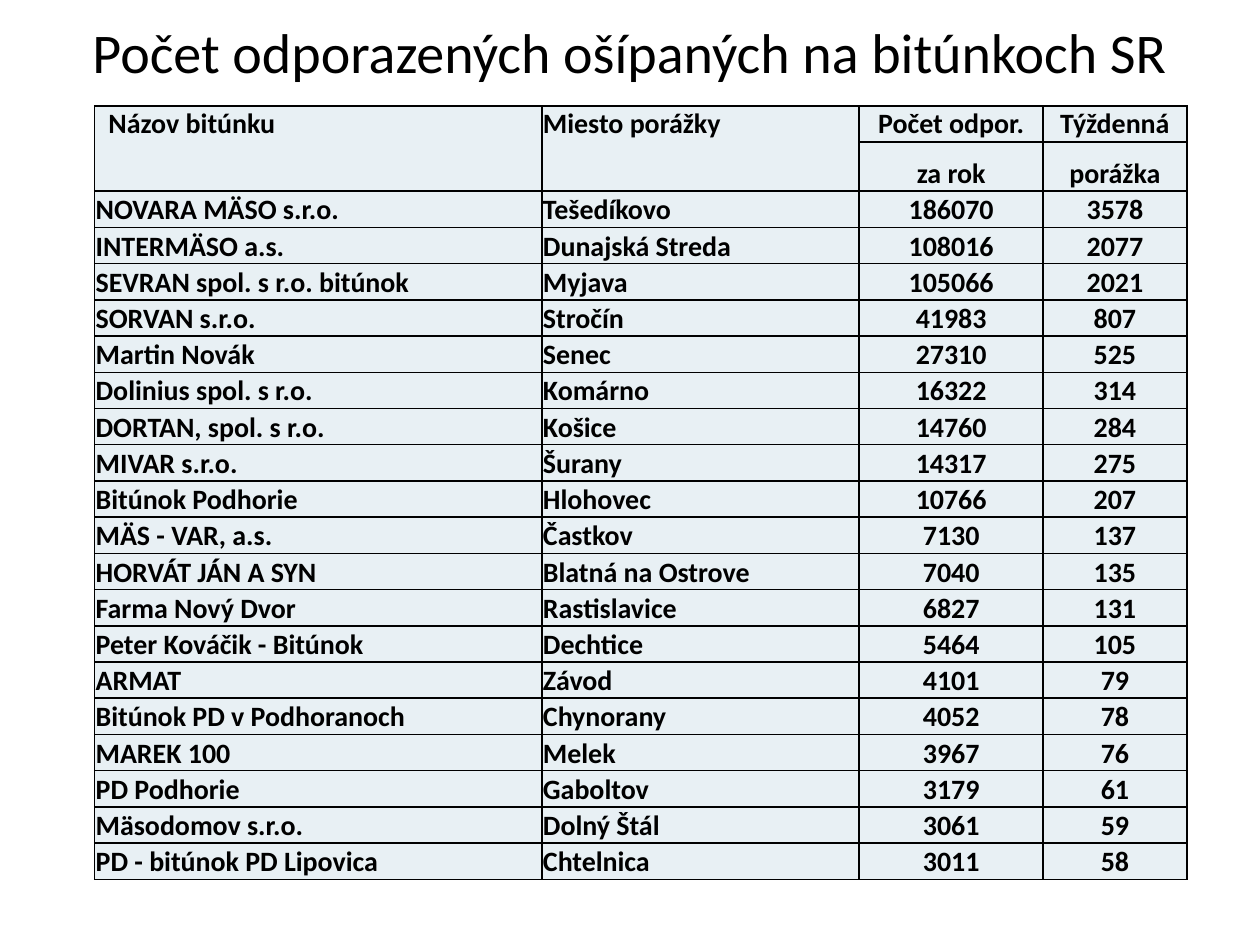
from dataclasses import dataclass

from lxml import etree
from pptx import Presentation
from pptx.dml.color import RGBColor
from pptx.enum.text import MSO_ANCHOR, PP_ALIGN
from pptx.oxml.ns import qn
from pptx.util import Pt

LEFT, CENTER = PP_ALIGN.LEFT, PP_ALIGN.CENTER
TOP, MIDDLE, BOTTOM = MSO_ANCHOR.TOP, MSO_ANCHOR.MIDDLE, MSO_ANCHOR.BOTTOM
TITLE_ONLY = 5


@dataclass(frozen=True)
class Theme:
    font: str = "Calibri"
    text: str = "000000"
    border: str = "000000"
    cell: str = "E8F0F4"
    title_size: int = 32
    cell_size: int = 16
    border_width: int = 1


THEME = Theme()
TITLE = "Počet odporazených ošípaných na bitúnkoch SR"
COLUMN_WIDTHS = (255.6, 181.4, 105.1, 82.1)
ALIGNMENTS = (LEFT, LEFT, CENTER, CENTER)
ROW_HEIGHT = 20.7
SUBHEADER_HEIGHT = 28.1
CELL_MARGIN = 0.7
HEADER_INDENT = 8

HEADERS = [
    ("Názov bitúnku", "Miesto porážky", "Počet odpor.", "Týždenná"),
    ("", "", "za rok", "porážka"),
]
SLAUGHTERHOUSES = [
    ("NOVARA MÄSO s.r.o.", "Tešedíkovo", 186070, 3578),
    ("INTERMÄSO a.s.", "Dunajská Streda", 108016, 2077),
    ("SEVRAN spol. s r.o. bitúnok", "Myjava", 105066, 2021),
    ("SORVAN s.r.o.", "Stročín", 41983, 807),
    ("Martin Novák", "Senec", 27310, 525),
    ("Dolinius spol. s r.o.", "Komárno", 16322, 314),
    ("DORTAN, spol. s r.o.", "Košice", 14760, 284),
    ("MIVAR s.r.o.", "Šurany", 14317, 275),
    ("Bitúnok Podhorie", "Hlohovec", 10766, 207),
    ("MÄS - VAR, a.s.", "Častkov", 7130, 137),
    ("HORVÁT JÁN A SYN", "Blatná na Ostrove", 7040, 135),
    ("Farma Nový Dvor", "Rastislavice", 6827, 131),
    ("Peter Kováčik - Bitúnok", "Dechtice", 5464, 105),
    ("ARMAT", "Závod", 4101, 79),
    ("Bitúnok PD v Podhoranoch", "Chynorany", 4052, 78),
    ("MAREK 100", "Melek", 3967, 76),
    ("PD Podhorie", "Gaboltov", 3179, 61),
    ("Mäsodomov s.r.o.", "Dolný Štál", 3061, 59),
    ("PD - bitúnok PD Lipovica", "Chtelnica", 3011, 58),
]


def write_text(paragraph, text, size, alignment, bold):
    paragraph.text = text
    paragraph.alignment = alignment
    font = paragraph.font
    font.name = THEME.font
    font.size = Pt(size)
    font.bold = bold
    font.color.rgb = RGBColor.from_string(THEME.text)


def set_title(slide):
    title = slide.shapes.title
    title.left, title.top, title.width, title.height = Pt(36), Pt(3.6), Pt(648), Pt(51)
    title.text_frame.vertical_anchor = MIDDLE
    write_text(title.text_frame.paragraphs[0], TITLE, THEME.title_size, CENTER, False)


def add_borders(cell):
    properties = cell._tc.get_or_add_tcPr()
    for side in ("a:lnL", "a:lnR", "a:lnT", "a:lnB"):
        line = etree.SubElement(properties, qn(side), w=str(Pt(THEME.border_width)))
        fill = etree.SubElement(line, qn("a:solidFill"))
        etree.SubElement(fill, qn("a:srgbClr"), val=THEME.border)


def format_cell(cell, text, alignment, anchor):
    cell.margin_left = cell.margin_right = cell.margin_top = Pt(CELL_MARGIN)
    cell.margin_bottom = Pt(0)
    cell.vertical_anchor = anchor
    write_text(cell.text_frame.paragraphs[0], text, THEME.cell_size, alignment, True)
    add_borders(cell)
    cell.fill.solid()
    cell.fill.fore_color.rgb = RGBColor.from_string(THEME.cell)


def add_slaughter_table(slide):
    records = HEADERS + SLAUGHTERHOUSES
    heights = [ROW_HEIGHT] * len(records)
    heights[1] = SUBHEADER_HEIGHT
    table = slide.shapes.add_table(
        len(records), len(COLUMN_WIDTHS), Pt(54), Pt(60.5),
        Pt(sum(COLUMN_WIDTHS)), Pt(sum(heights)),
    ).table
    for column, width in zip(table.columns, COLUMN_WIDTHS):
        column.width = Pt(width)
    for row_index, (record, height) in enumerate(zip(records, heights)):
        table.rows[row_index].height = Pt(height)
        anchor = TOP if row_index == 0 else BOTTOM
        for column_index, (value, alignment) in enumerate(zip(record, ALIGNMENTS)):
            format_cell(table.cell(row_index, column_index), str(value), alignment, anchor)
    for column_index in (0, 1):
        table.cell(0, column_index).merge(table.cell(1, column_index))
    table.cell(0, 0).margin_left = Pt(HEADER_INDENT)


def main():
    presentation = Presentation()
    presentation.slide_width, presentation.slide_height = Pt(720), Pt(540)
    slide = presentation.slides.add_slide(presentation.slide_layouts[TITLE_ONLY])
    set_title(slide)
    add_slaughter_table(slide)
    presentation.save("out.pptx")


if __name__ == "__main__":
    main()
